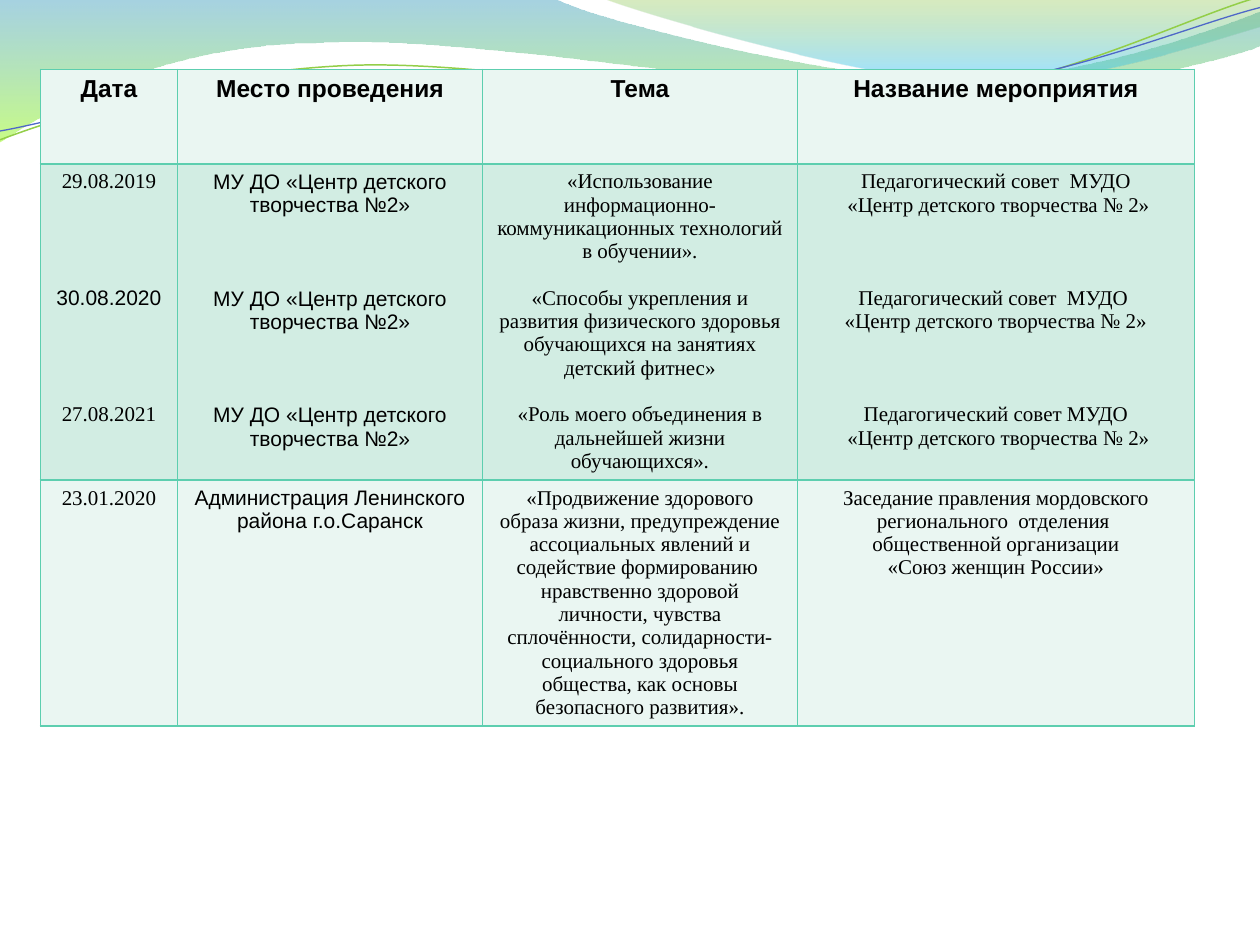
from dataclasses import dataclass

from lxml import etree
from pptx import Presentation, util as u
from pptx.dml.color import RGBColor
from pptx.enum import text
from pptx.oxml.ns import qn

ARIAL, TIMES = "Arial", "Times New Roman"
PALE, MINT, BORDER, BLACK = "EAF6F2", "D2EDE3", "5DCEAF", "000000"
LINE_HEIGHT = 13.3


@dataclass
class Stop:
    position: float
    color: str
    opacity: int


@dataclass
class Wave:
    """A start point and segments: two numbers make a line, six a curve."""
    start: tuple[float, float]
    segments: list[tuple[float, ...]]
    stops: tuple[Stop, ...] = ()
    line_color: str = ""
    line_width: float = 0


@dataclass
class Entry:
    lines: tuple[str, ...]
    font: str = TIMES
    lines_before: int = 0


@dataclass
class Row:
    height: float
    fill: str
    cells: list[list[Entry]]
    size: int = 12
    bold: bool = False


WAVES = [
    Wave((0, -0.01), [
        (4.4, -0.01), (4.76, 0.17, 6.64, 0.63, 7.58, 0.63),
        (8.53, 0.63, 9.58, 0.26, 10, 0.09), (10.01, 0.36),
        (9.83, 0.44, 8.7, 0.76, 7.46, 0.75), (6.22, 0.75, 3.82, 0.28, 2.57, 0.34),
        (1.29, 0.35, 0.46, 0.83, -0.01, 1.13)],
        stops=(Stop(0, "3B9CBF", 45), Stop(1, "9CFA24", 55))),
    Wave((4.79, -0.01), [
        (5.09, 0.11, 6.82, 0.62, 7.69, 0.65), (8.56, 0.69, 9.61, 0.32, 10, 0.21),
        (10, 0)],
        stops=(Stop(0, "7EBE2C", 30), Stop(0.8, "39C1F1", 45))),
    Wave((0, 1.11), [
        (0.48, 0.93, 1.58, 0.57, 2.77, 0.52), (3.95, 0.47, 5.93, 0.89, 7.13, 0.8),
        (8.33, 0.71, 9.38, 0.15, 9.98, -0.02)],
        line_color="93CE48", line_width=0.85),
    Wave((0, 1.04), [
        (0.47, 0.96, 1.64, 0.61, 2.83, 0.56), (4.03, 0.51, 5.97, 0.83, 7.17, 0.75),
        (8.36, 0.67, 9.41, 0.21, 10, 0.06)],
        line_color="4E67C8", line_width=0.75),
]

CENTRE = ("МУ ДО «Центр детского творчества №2»",)
COUNCIL_CENTRE = "«Центр детского творчества № 2»"
COLUMN_WIDTHS = [1.09, 2.42, 2.5, 3.15]
ROWS = [
    Row(0.75, PALE, [[Entry((title,), ARIAL)] for title in (
        "Дата", "Место проведения", "Тема", "Название мероприятия")], size=14, bold=True),
    Row(2.51, MINT, [
        [Entry(("29.08.2019",)), Entry(("30.08.2020",), ARIAL, 4),
         Entry(("27.08.2021",), TIMES, 4)],
        [Entry(CENTRE, ARIAL, gap) for gap in (0, 3, 3)],
        [Entry(("«Использование информационно-коммуникационных технологий в обучении».",)),
         Entry(("«Способы укрепления и развития физического здоровья обучающихся "
                "на занятиях детский фитнес»",), TIMES, 1),
         Entry(("«Роль моего объединения в дальнейшей жизни обучающихся».",), TIMES, 1)],
        [Entry(("Педагогический совет  МУДО", " " + COUNCIL_CENTRE)),
         Entry(("Педагогический совет  МУДО ", COUNCIL_CENTRE), TIMES, 3),
         Entry(("Педагогический совет МУДО", " " + COUNCIL_CENTRE), TIMES, 3)],
    ]),
    Row(1.95, PALE, [
        [Entry(("23.01.2020",))],
        [Entry(("Администрация Ленинского района г.о.Саранск",), ARIAL)],
        [Entry(("«Продвижение здорового образа жизни, предупреждение ассоциальных явлений "
                "и содействие формированию  нравственно здоровой личности, чувства "
                "сплочённости, солидарности- социального здоровья общества, "
                "как основы безопасного развития».",))],
        [Entry(("Заседание правления мордовского регионального  отделения  "
                "общественной организации", "«Союз женщин России»"))],
    ]),
]


def rgb(color: str) -> RGBColor:
    return RGBColor.from_string(color)


def bend_segments(shape, segments) -> None:
    """Turn the three straight steps of each six-number segment into one curve."""
    steps = iter(list(shape._element.iter(qn("a:lnTo"))))
    for segment in segments:
        first = next(steps)
        if len(segment) == 6:
            first.tag = qn("a:cubicBezTo")
            for step in (next(steps), next(steps)):
                first.append(step[0])
                step.getparent().remove(step)


def add_wave(slide, wave: Wave) -> None:
    points = [wave.start]
    for segment in wave.segments:
        points.extend(zip(segment[::2], segment[1::2]))
    first, *others = [(u.Inches(x), u.Inches(y)) for x, y in points]
    builder = slide.shapes.build_freeform(*first)
    builder.add_line_segments(others, close=bool(wave.stops))
    shape = builder.convert_to_shape()
    bend_segments(shape, wave.segments)
    shape.shadow.inherit = False
    if not wave.stops:
        shape.fill.background()
        shape.line.color.rgb = rgb(wave.line_color)
        shape.line.width = u.Pt(wave.line_width)
        return
    shape.line.fill.background()
    shape.fill.gradient()
    shape.fill.gradient_angle = 270
    for target, stop in zip(shape.fill.gradient_stops, wave.stops):
        target.position = stop.position
        target.color.rgb = rgb(stop.color)
    colors = list(shape._element.spPr.iter(qn("a:srgbClr")))
    for element, stop in zip(colors, wave.stops):
        etree.SubElement(element, qn("a:alpha"), val=str(stop.opacity * 1000))


def add_borders(cell) -> None:
    properties = cell._tc.get_or_add_tcPr()
    for side in ("lnL", "lnR", "lnT", "lnB"):
        line = etree.SubElement(properties, qn(f"a:{side}"), w=str(u.Pt(1)))
        fill = etree.SubElement(line, qn("a:solidFill"))
        etree.SubElement(fill, qn("a:srgbClr"), val=BORDER)


def fill_cell(cell, entries: list[Entry], row: Row) -> None:
    add_borders(cell)
    cell.fill.solid()
    cell.fill.fore_color.rgb = rgb(row.fill)
    frame = cell.text_frame
    lines = [(line, entry, index) for entry in entries for index, line in enumerate(entry.lines)]
    for number, (line, entry, index) in enumerate(lines):
        paragraph = frame.add_paragraph() if number else frame.paragraphs[0]
        paragraph.alignment = text.PP_ALIGN.CENTER
        if index == 0 and entry.lines_before:
            paragraph.space_before = u.Pt(entry.lines_before * LINE_HEIGHT)
        run = paragraph.add_run()
        run.text = line
        font_format = {"name": entry.font, "size": u.Pt(row.size), "bold": row.bold}
        for name, value in font_format.items():
            setattr(run.font, name, value)
        run.font.color.rgb = rgb(BLACK)


def add_events_table(slide) -> None:
    size = (sum(COLUMN_WIDTHS), sum(row.height for row in ROWS))
    table = slide.shapes.add_table(
        len(ROWS), len(COLUMN_WIDTHS), u.Inches(0.32), u.Inches(0.55),
        *map(u.Inches, size)).table
    table.first_row = table.horz_banding = False
    for column, width in zip(table.columns, COLUMN_WIDTHS):
        column.width = u.Inches(width)
    for table_row, row in zip(table.rows, ROWS):
        table_row.height = u.Inches(row.height)
        for cell, entries in zip(table_row.cells, row.cells):
            fill_cell(cell, entries, row)


def main() -> None:
    presentation = Presentation()
    presentation.slide_width, presentation.slide_height = u.Inches(10), u.Inches(7.5)
    slide = presentation.slides.add_slide(presentation.slide_layouts[6])
    for wave in WAVES:
        add_wave(slide, wave)
    add_events_table(slide)
    presentation.save("out.pptx")


if __name__ == "__main__":
    main()
